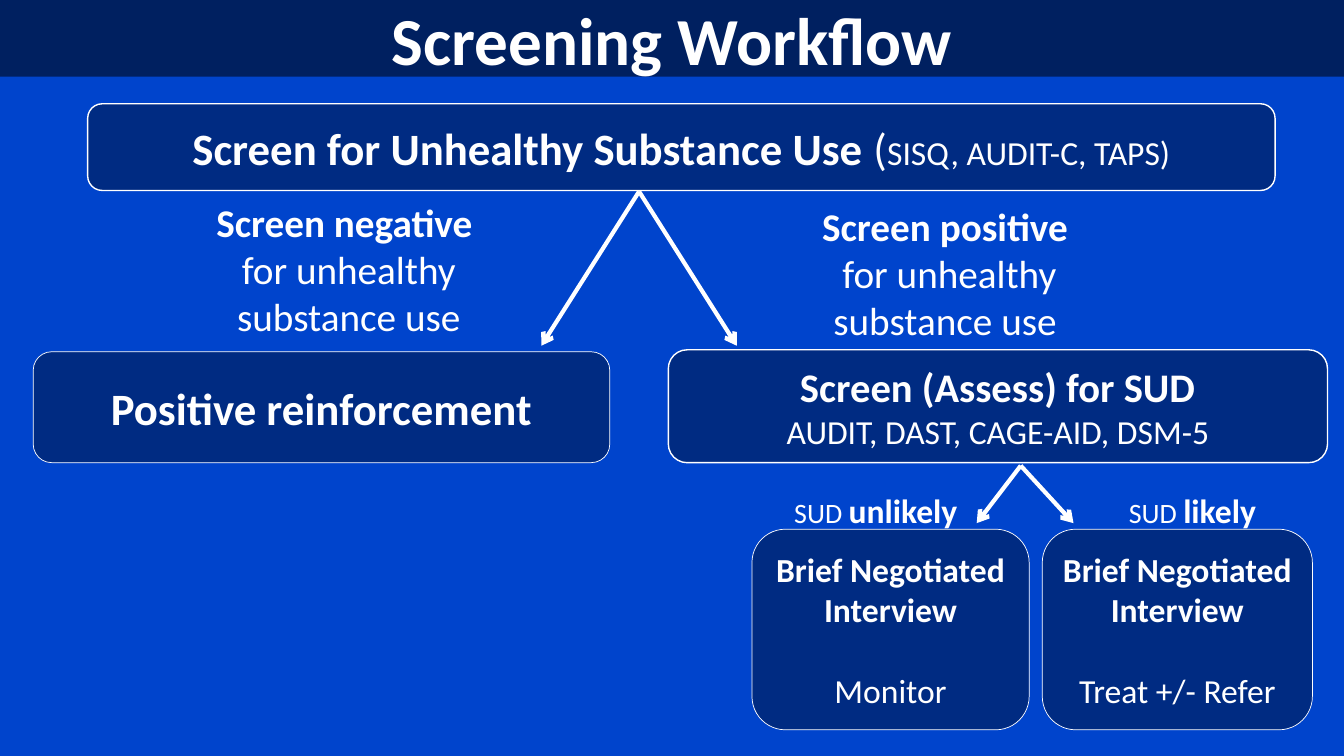
"""Builds the Screening Workflow slide as a flow chart on a 40 by 30 grid."""
from typing import NamedTuple, Optional

from lxml import etree
from pptx import Presentation
from pptx import util as u
from pptx.dml.color import RGBColor
from pptx.enum import shapes, text
from pptx.oxml import ns

WHITE = RGBColor(0xFF, 0xFF, 0xFF)
BLUE = RGBColor(0x00, 0x44, 0xCC)
NAVY = RGBColor(0x00, 0x2B, 0x82)
TITLE_NAVY = RGBColor(0x00, 0x20, 0x60)
FONT = "Calibri"
COLS, ROWS = 40, 30
WIDTH, HEIGHT = u.Inches(13.333), u.Inches(7.5)
ROUNDED = shapes.MSO_SHAPE.FLOWCHART_ALTERNATE_PROCESS
RECT = shapes.MSO_SHAPE.RECTANGLE


class Run(NamedTuple):
    words: str
    size: int
    bold: bool = False


class Para(NamedTuple):
    runs: list[Run]
    before: int = 0


class Area(NamedTuple):
    col: float
    row: float
    cols: float
    rows: float


class Box(NamedTuple):
    area: Area
    paras: list[Para]
    line: Optional[float] = 0.5
    fill: RGBColor = NAVY
    kind: shapes.MSO_SHAPE = ROUNDED


class Label(NamedTuple):
    area: Area
    paras: list[Para]
    wrap: bool = True


class Arrow(NamedTuple):
    col: float
    row: float
    to_col: float
    to_row: float


def x(col: float) -> int:
    return round(WIDTH * col / COLS)


def y(row: float) -> int:
    return round(HEIGHT * row / ROWS)


def place(area: Area) -> tuple[int, int, int, int]:
    return x(area.col), y(area.row), x(area.cols), y(area.rows)


def write(tf, paras: list[Para], align: text.PP_ALIGN) -> None:
    for i, para in enumerate(paras):
        p = tf.add_paragraph() if i else tf.paragraphs[0]
        p.alignment = align
        if para.before:
            p.space_before = u.Pt(para.before)
        for run in para.runs:
            r = p.add_run()
            r.text = run.words
            r.font.name, r.font.size, r.font.bold = FONT, u.Pt(run.size), run.bold
            r.font.color.rgb = WHITE


def draw_box(s, box: Box) -> None:
    sp = s.shapes.add_shape(box.kind, *place(box.area))
    sp.shadow.inherit = False
    sp.fill.solid()
    sp.fill.fore_color.rgb = box.fill
    if box.line is None:
        sp.line.fill.background()
    else:
        sp.line.color.rgb = WHITE
        sp.line.width = u.Pt(box.line)
    tf = sp.text_frame
    tf.word_wrap = True
    tf.vertical_anchor = text.MSO_ANCHOR.MIDDLE
    write(tf, box.paras, text.PP_ALIGN.CENTER)


def draw_label(s, label: Label) -> None:
    tf = s.shapes.add_textbox(*place(label.area)).text_frame
    tf.word_wrap = label.wrap
    tf.auto_size = text.MSO_AUTO_SIZE.SHAPE_TO_FIT_TEXT
    write(tf, label.paras, text.PP_ALIGN.CENTER if label.wrap else text.PP_ALIGN.LEFT)


def draw_arrow(s, arrow: Arrow) -> None:
    cx = s.shapes.add_connector(shapes.MSO_CONNECTOR.STRAIGHT, x(arrow.col), y(arrow.row),
                                x(arrow.to_col), y(arrow.to_row))
    cx.line.color.rgb = WHITE
    cx.line.width = u.Pt(3)
    etree.SubElement(cx.line._get_or_add_ln(), ns.qn("a:tailEnd"), type="arrow")
    etree.SubElement(cx._element.spPr, ns.qn("a:effectLst"))


def interview(col: float, cols: float, action: str) -> Box:
    return Box(Area(col, 21, cols, 7.96),
               [Para([Run("Brief Negotiated Interview", 24, True)]),
                Para([Run(action, 24)], before=29)])


def outcome(area: Area, result: str, detail: str) -> Label:
    return Label(area, [Para([Run(result, 28, True)]), Para([Run(detail, 28)])])


def likelihood(col: float, cols: float, word: str) -> Label:
    return Label(Area(col, 19.24, cols, 2),
                 [Para([Run("SUD ", 20), Run(word, 24, True)])], wrap=False)


BOXES = [
    Box(Area(0, 0, COLS, 3.04), [Para([Run("Screening Workflow", 48, True)])],
        None, TITLE_NAVY, RECT),
    Box(Area(2.61, 4.12, 35.34, 3.44),
        [Para([Run("Screen for Unhealthy Substance Use ", 32, True), Run("(", 32),
               Run("SISQ, AUDIT-C, TAPS)", 24)])], 1),
    Box(Area(0.99, 13.96, 17.16, 4.4),
        [Para([Run("Positive reinforcement", 32, True)], before=12)]),
    Box(Area(19.89, 13.88, 19.62, 4.48),
        [Para([Run("Screen (Assess) for SUD", 29, True)]),
         Para([Run("AUDIT, DAST, CAGE-AID, DSM-5", 24)])], 1),
    interview(22.38, 8.25, "Monitor"),
    interview(31.02, 8.04, "Treat +/- Refer"),
]
LABELS = [
    outcome(Area(5.43, 7.68, 9.9, 6.04), "Screen negative ", "for unhealthy substance use"),
    outcome(Area(22.38, 7.84, 11.49, 6.04), "Screen positive", " for unhealthy substance use"),
    likelihood(23.34, 5.52, "unlikely"),
    likelihood(33.3, 4.44, "likely"),
]
ARROWS = [
    Arrow(19.02, 7.6, 16.11, 13.72),
    Arrow(19.02, 7.6, 21.93, 13.72),
    Arrow(30.38, 18.48, 29.07, 20.76),
    Arrow(30.38, 18.48, 31.95, 20.76),
]


def main() -> None:
    prs = Presentation()
    prs.slide_width, prs.slide_height = WIDTH, HEIGHT
    s = prs.slides.add_slide(prs.slide_layouts[6])
    s.background.fill.solid()
    s.background.fill.fore_color.rgb = BLUE
    for box in BOXES:
        draw_box(s, box)
    for label in LABELS:
        draw_label(s, label)
    for arrow in ARROWS:
        draw_arrow(s, arrow)
    prs.save("out.pptx")


if __name__ == "__main__":
    main()
